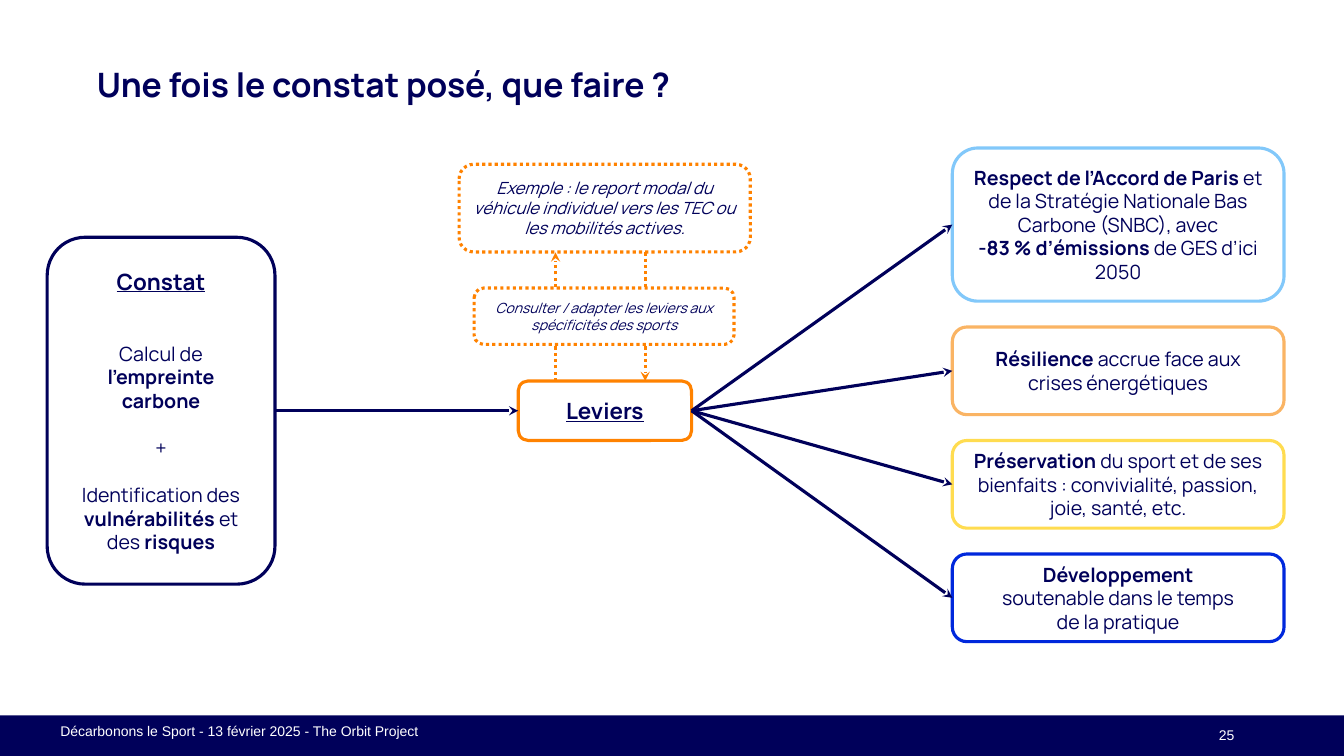
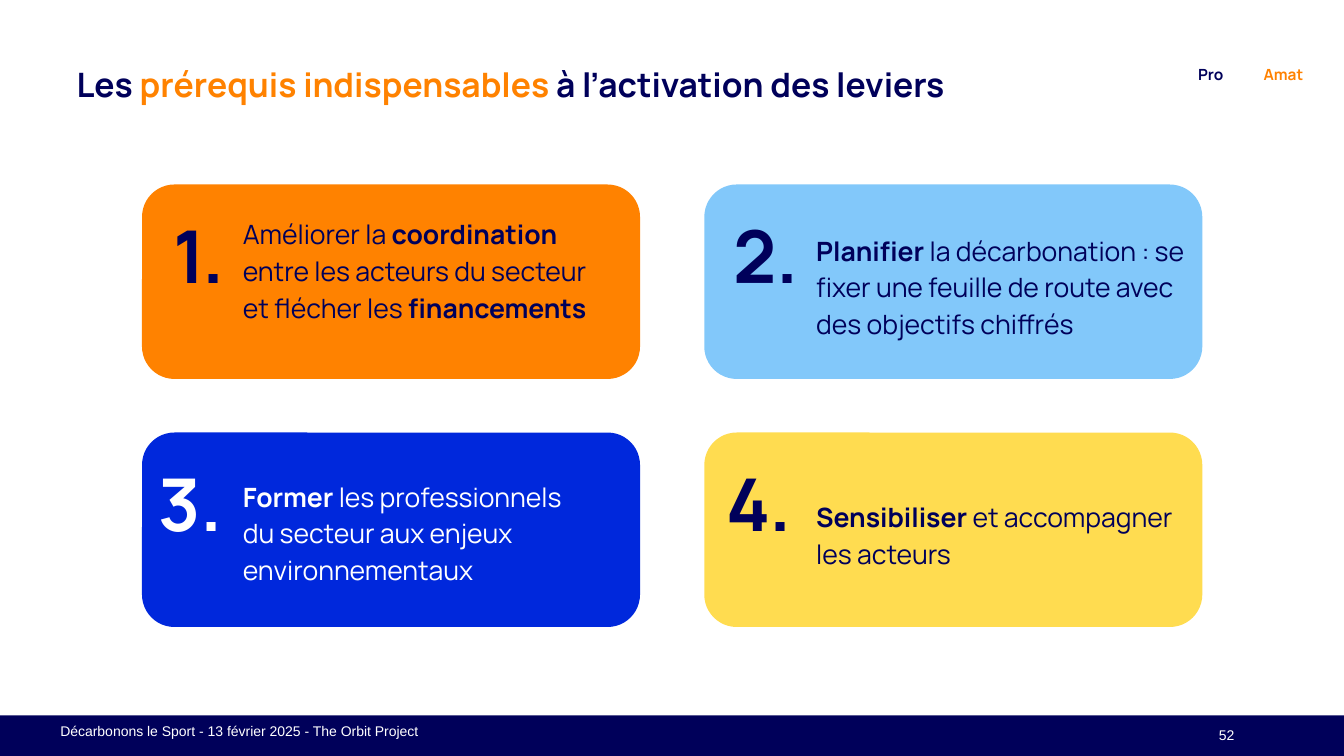
from lxml import etree
from pptx import Presentation
from pptx.dml.color import RGBColor
from pptx.enum import dml, shapes, text
from pptx.oxml import ns
from pptx.util import Cm, Pt

# Shared style
COLORS = {"navy": "00005A", "orange": "FF8200", "sky": "82C8FA", "peach": "FAB464",
          "yellow": "FFDC50", "blue": "0028DC", "white": "FFFFFF"}
FONT, FOOTER_FONT = "Manrope", "Arial"
INSET = 0.25
BAND_TOP, BAND_HEIGHT = 18.03, 1.02
FOOTER = "Décarbonons le Sport - 13 février 2025 - The Orbit Project"
LEFT, CENTER, RIGHT = text.PP_ALIGN.LEFT, text.PP_ALIGN.CENTER, text.PP_ALIGN.RIGHT
TOP, MIDDLE = text.MSO_ANCHOR.TOP, text.MSO_ANCHOR.MIDDLE

# Content: **...** marks emphasis
LEVERS_TITLE = "Une fois le constat posé, que faire ?"
FINDINGS = ["**Constat**", "Calcul de **l’empreinte carbone**", "+",
            "Identification des **vulnérabilités** et des **risques**"]
FINDINGS_GAPS = [0, 33.6, 16.8, 16.8]
LEVERS = "**Leviers**"
EXAMPLE = ("Exemple : le report modal du véhicule individuel vers les TEC "
           "ou les mobilités actives.")
ADAPT = "Consulter / adapter les leviers aux spécificités des sports"
GOALS = [  # colour, height, paragraphs
    ("sky", 3.86, ["**Respect de l’Accord de Paris** et de la Stratégie Nationale Bas "
                   "Carbone (SNBC), avec",
                   "**-83 % d’émissions** de GES d’ici 2050"]),
    ("peach", 2.21, ["**Résilience** accrue face aux crises énergétiques"]),
    ("yellow", 2.21, ["**Préservation** du sport et de ses bienfaits : convivialité, "
                      "passion, joie, santé, etc."]),
    ("blue", 2.21, ["**Développement**", "soutenable dans le temps", "de la pratique"]),
]
NEEDS_TITLE = "Les **prérequis indispensables** à l’activation des leviers"
AUDIENCES = [("Pro", "navy"), ("Amat", "orange")]
NEEDS = [  # fill, text colour, number inset, text drop, wording
    ("orange", "navy", 0.79, 0.48, "Améliorer la **coordination** entre les acteurs du "
                                   "secteur et flécher les **financements**"),
    ("sky", "navy", 0.74, 0.89, "**Planifier** la décarbonation : se fixer une feuille de "
                                "route avec des objectifs chiffrés"),
    ("blue", "white", 0.41, 0.84, "**Former** les professionnels du secteur aux enjeux "
                                  "environnementaux"),
    ("yellow", "navy", 0.56, 1.35, "**Sensibiliser** et accompagner les acteurs"),
]


def rgb(name):
    return RGBColor.from_string(COLORS[name])


def write(frame, paragraphs, size, color="navy", align=LEFT, anchor=TOP, inset=INSET,
          font=FONT, bold=False, italic=False, accent=None, gaps=None, spacing=None):
    """Fill a text frame; emphasis is bold, or coloured when accent is given."""
    frame.word_wrap = True
    frame.auto_size = text.MSO_AUTO_SIZE.NONE
    frame.vertical_anchor = anchor
    frame.margin_left = frame.margin_right = Cm(inset)
    frame.margin_top = frame.margin_bottom = Cm(inset)
    for i, wording in enumerate(paragraphs):
        paragraph = frame.paragraphs[0] if i == 0 else frame.add_paragraph()
        paragraph.alignment = align
        if gaps and gaps[i]:
            paragraph.space_before = Pt(gaps[i])
        if spacing:
            paragraph.line_spacing = spacing
        for j, part in enumerate(wording.split("**")):
            if not part:
                continue
            run = paragraph.add_run()
            run.text = part
            strong = j % 2 == 1
            run.font.name, run.font.size = font, Pt(size)
            run.font.bold, run.font.italic = bold or strong, italic
            run.font.color.rgb = rgb(accent if accent and strong else color)


def add_text(slide, place, paragraphs, size, **style):
    label = slide.shapes.add_textbox(*map(Cm, place))
    write(label.text_frame, paragraphs, size, **style)


def add_box(slide, place, fill="white", line=None, dotted=False,
            preset=shapes.MSO_SHAPE.ROUNDED_RECTANGLE):
    box = slide.shapes.add_shape(preset, *map(Cm, place))
    box.shadow.inherit = False
    box.fill.solid()
    box.fill.fore_color.rgb = rgb(fill)
    if line:
        style_line(box.line, line, dotted)
    else:
        box.line.fill.background()
    return box


def style_line(line, color, dotted):
    line.color.rgb = rgb(color)
    line.width = Pt(2.25)
    if dotted:
        line.dash_style = dml.MSO_LINE.ROUND_DOT


def add_arrow(slide, start, start_site, end, end_site, color="navy"):
    """Straight arrow between two connection sites."""
    arrow = slide.shapes.add_connector(shapes.MSO_CONNECTOR.STRAIGHT, 0, 0, 0, 0)
    arrow.begin_connect(start, start_site)
    arrow.end_connect(end, end_site)
    finish_arrow(arrow, color, False)


def finish_arrow(arrow, color, dotted):
    style_line(arrow.line, color, dotted)
    etree.SubElement(arrow.line._get_or_add_ln(), ns.qn("a:tailEnd"), type="stealth")
    etree.SubElement(arrow.element.spPr, ns.qn("a:effectLst"))


def add_slide(deck, title, title_place, number):
    slide = deck.slides.add_slide(deck.slide_layouts[5])
    heading = slide.shapes.title
    heading.left, heading.top, heading.width, heading.height = map(Cm, title_place)
    write(heading.text_frame, [title], 24, inset=0, bold=True, accent="orange")
    add_text(slide, (24.31, 18, 6.8, BAND_HEIGHT), [str(number)], 10, color="white",
             align=RIGHT, anchor=MIDDLE, inset=0, font=FOOTER_FONT)
    add_text(slide, (1.27, 18, 16.97, 0.43), [FOOTER], 10, color="white",
             font=FOOTER_FONT)
    return slide


def put_band_on_layout(slide):
    band = add_box(slide, (0, BAND_TOP, 33.87, BAND_HEIGHT), "navy",
                   preset=shapes.MSO_SHAPE.RECTANGLE)
    band.element.nvSpPr.cNvPr.set("id", "20")
    slide.slide_layout.shapes.element.insert(2, band.element)


def build_levers(deck):
    slide = add_slide(deck, LEVERS_TITLE, (2.44, 1.6, 17.17, 1.93), 25)
    put_band_on_layout(slide)
    centered = {"align": CENTER, "anchor": MIDDLE}

    # Findings lead to levers
    findings = add_box(slide, (1.19, 5.98, 5.74, 8.74), line="navy")
    write(findings.text_frame, FINDINGS, 14, gaps=FINDINGS_GAPS, **centered)
    levers = add_box(slide, (13.06, 9.6, 4.37, 1.5), line="orange")
    write(levers.text_frame, [LEVERS], 16, **centered)
    for box in (findings, levers):
        heading = box.text_frame.paragraphs[0].runs[0].font
        heading.size, heading.underline = Pt(16), True
    add_arrow(slide, findings, 3, levers, 1)

    # Levers lead to goals
    top, gap = 3.73, 0.65
    for color, height, paragraphs in GOALS:
        goal = add_box(slide, (24, top, 8.36, height), line=color)
        write(goal.text_frame, paragraphs, 14, **centered)
        add_arrow(slide, levers, 3, goal, 1)
        top += height + gap

    # Loop between levers and the example
    example = add_box(slide, (11.57, 4.14, 7.34, 2.21), line="orange", dotted=True)
    write(example.text_frame, [EXAMPLE], 12, italic=True, **centered)
    lower, upper = 9.6, 6.36
    for x, start, end in ((14, lower, upper), (16.26, upper, lower)):
        arrow = slide.shapes.add_connector(shapes.MSO_CONNECTOR.STRAIGHT,
                                           *map(Cm, (x, start, x, end)))
        finish_arrow(arrow, "orange", True)
    adapt = add_box(slide, (11.95, 7.26, 6.55, 1.42), line="orange", dotted=True)
    write(adapt.text_frame, [ADAPT], 10, italic=True, **centered)


def build_needs(deck):
    slide = add_slide(deck, NEEDS_TITLE, (1.93, 1.6, 28.7, 1.37), 52)
    for i, (audience, color) in enumerate(AUDIENCES):
        add_text(slide, (29.46 + 1.83 * i, 1.52, 2.11, 0.71), [audience], 11,
                 color=color, align=CENTER, anchor=MIDDLE, bold=True)

    # Two by two cards
    width, height = 12.55, 4.9
    text_columns = [(2.29, 9.4), (2.57, 9.86)]
    for i, (fill, color, number_inset, drop, wording) in enumerate(NEEDS):
        row, column = divmod(i, 2)
        left, top = 3.58 + 14.17 * column, 4.65 + 6.25 * row
        add_box(slide, (left, top, width, height), fill)
        add_text(slide, (left + number_inset, top + 0.65, 2.44, 2.21), [f"{i + 1}."], 52,
                 color=color, inset=0, bold=True)
        text_inset, text_width = text_columns[column]
        add_text(slide, (left + text_inset, top + drop, text_width, 3.2), [wording], 19,
                 color=color, spacing=1.15)


def main():
    deck = Presentation()
    deck.slide_width, deck.slide_height = Cm(33.87), Cm(19.05)
    build_levers(deck)
    build_needs(deck)
    deck.save("out.pptx")


if __name__ == "__main__":
    main()
